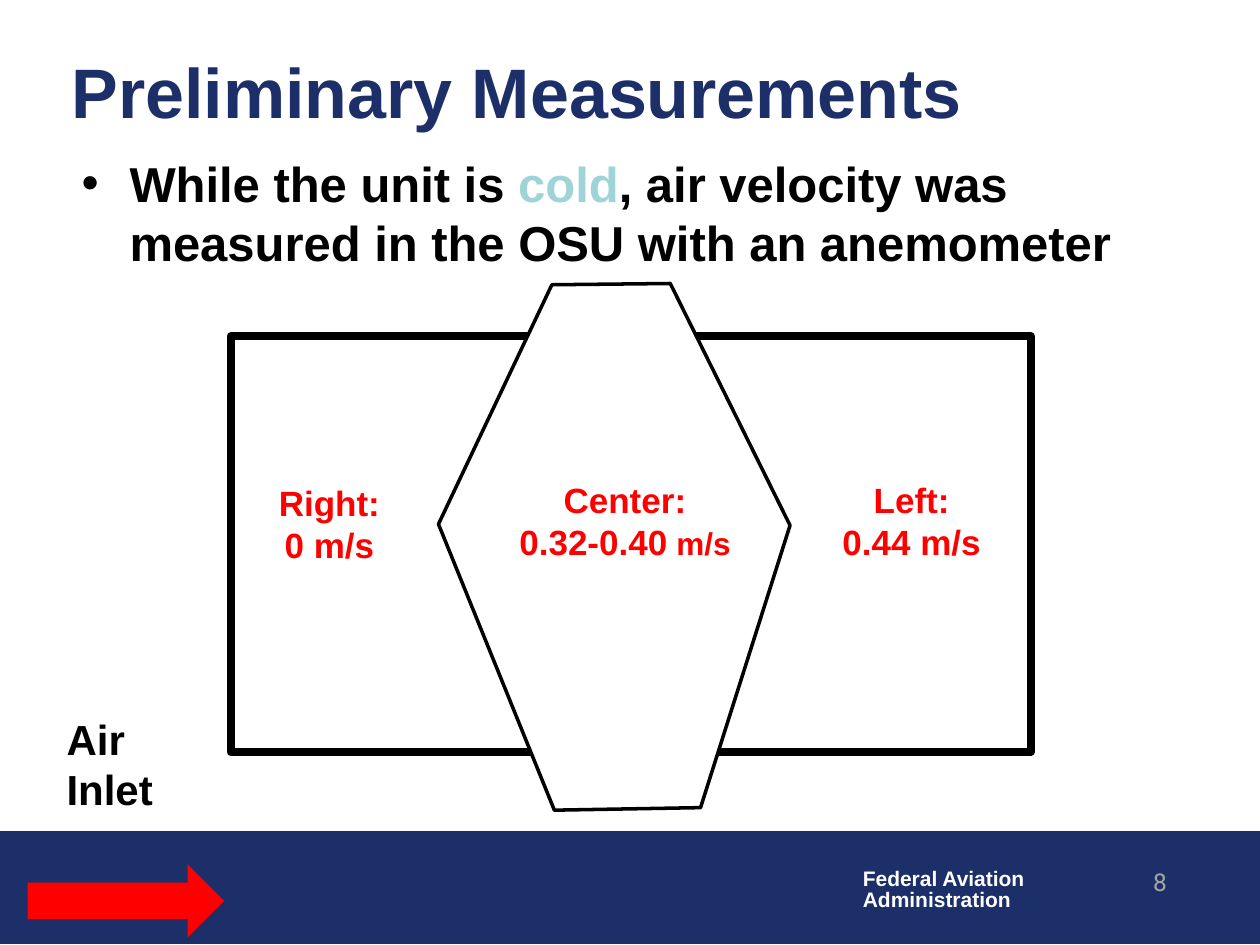
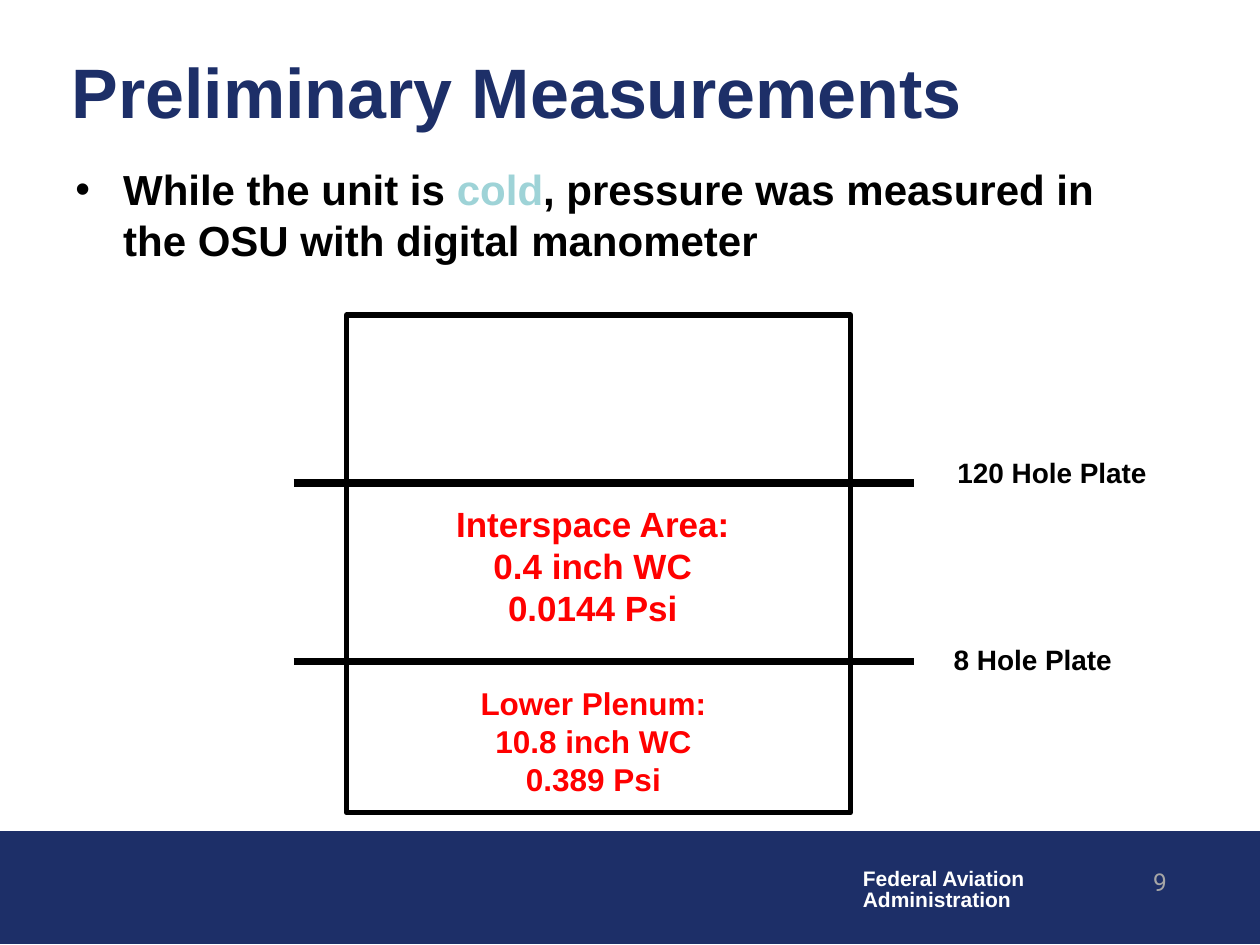
from lxml.etree import SubElement
from pptx import Presentation
from pptx.dml.color import RGBColor
from pptx.enum.shapes import MSO_CONNECTOR, MSO_SHAPE
from pptx.enum.text import MSO_ANCHOR, PP_ALIGN
from pptx.oxml.ns import qn
from pptx.util import Inches, Pt

NAVY, BLACK, WHITE, RED = "1D2F68", "000000", "FFFFFF", "FF0000"
AQUA, GREY = "9ED3D7", "A6A6A6"
COLS, ROWS = 10, 7.5


def paint(target, code):
    """Give a fill, a line fill or a font colour the hex colour."""
    if hasattr(target, "solid"):
        target.solid()
        target.fore_color.rgb = RGBColor.from_string(code)
    else:
        target.color.rgb = RGBColor.from_string(code)


class Deck:
    def __init__(self):
        self.prs = Presentation()
        self.prs.slide_width, self.prs.slide_height = Inches(10), Inches(7.5)
        self.col = self.prs.slide_width / COLS
        self.row = self.prs.slide_height / ROWS
        self.slide = None

    def place(self, x, y):
        return round(x * self.col), round(y * self.row)

    def start(self, title, number):
        """Open a slide with the shared title, band, sign and number."""
        self.slide = self.prs.slides.add_slide(self.prs.slide_layouts[5])
        head = self.slide.shapes.title
        head.left, head.top = self.place(0.47, 0.38)
        head.width, head.height = self.place(9.27, 0.67)
        head.text_frame.text = title
        head.text_frame.vertical_anchor = MSO_ANCHOR.MIDDLE
        self.style(head.text_frame, 40, NAVY, PP_ALIGN.LEFT)
        self.shape((0, 6.6, 10, 0.89), NAVY, NAVY, 0.75)
        sign = self.text("Federal Aviation\nAdministration",
                         (6.75, 6.85, 1.5, 0.44), 12, WHITE)
        for para in sign.paragraphs:
            para.line_spacing = 0.85
        self.text(str(number), (8.18, 6.83, 1.18, 0.5), 14, GREY,
                  PP_ALIGN.RIGHT, "Roboto", False)

    def font(self, run, size, color, face="Arial", bold=True):
        run.font.name, run.font.size, run.font.bold = face, Pt(size), bold
        paint(run.font, color)

    def style(self, frame, size, color, align, face="Arial", bold=True):
        for para in frame.paragraphs:
            para.alignment = align
            for run in para.runs:
                self.font(run, size, color, face, bold)

    def text(self, words, box, size, color=BLACK, align=PP_ALIGN.LEFT,
             face="Arial", bold=True):
        area = self.slide.shapes.add_textbox(*self.place(*box[:2]),
                                             *self.place(*box[2:]))
        frame = area.text_frame
        frame.word_wrap = True
        frame.text = words
        self.style(frame, size, color, align, face, bold)
        return frame

    def label(self, words, box, size=20):
        return self.text(words, box, size, RED, PP_ALIGN.CENTER)

    def bullet(self, parts, box, size):
        """Write one bulleted paragraph from (words, colour) parts."""
        para = self.text("", box, size).paragraphs[0]
        props = para._p.get_or_add_pPr()
        props.set("marL", str(Inches(0.38)))
        props.set("indent", str(-Inches(0.38)))
        SubElement(props, qn("a:buFont")).set("typeface", "Arial")
        SubElement(props, qn("a:buChar")).set("char", "•")
        for words, color in parts:
            run = para.add_run()
            run.text = words
            self.font(run, size, color)

    def finish(self, shape, fill, line, width):
        shape.shadow.inherit = False
        paint(shape.fill, fill)
        if line:
            paint(shape.line.fill, line)
            shape.line.width = Pt(width)
            SubElement(shape.line._ln, qn("a:round"))
        else:
            shape.line.fill.background()

    def shape(self, box, fill=WHITE, line=BLACK, width=3,
              kind=MSO_SHAPE.RECTANGLE):
        item = self.slide.shapes.add_shape(kind, *self.place(*box[:2]),
                                           *self.place(*box[2:]))
        self.finish(item, fill, line, width)

    def outline(self, points, width):
        first, *rest = [self.place(*point) for point in points]
        pen = self.slide.shapes.build_freeform(*first)
        pen.add_line_segments(rest, close=True)
        self.finish(pen.convert_to_shape(), WHITE, BLACK, width)

    def rule(self, left, right, y, width):
        line = self.slide.shapes.add_connector(
            MSO_CONNECTOR.STRAIGHT, *self.place(left, y), *self.place(right, y))
        paint(line.line.fill, BLACK)
        line.line.width = Pt(width)
        SubElement(line._element.spPr, qn("a:effectLst"))


def claim(rest):
    return [("While the unit is ", BLACK), ("cold", AQUA), (rest, BLACK)]


def speed(deck):
    deck.start("Preliminary Measurements", 8)
    deck.bullet(claim(", air velocity was measured in the OSU with an anemometer"),
                (0.55, 1.17, 8.8, 1.1), 28)

    # Unit seen from above
    deck.shape((1.83, 2.67, 6.35, 3.3), width=4.5)
    deck.outline([(4.38, 2.26), (3.48, 4.16), (4.4, 6.43),
                  (5.56, 6.41), (6.27, 4.17), (5.32, 2.25)], 2)

    # Air speeds
    deck.label("Left:\n0.44 m/s", (6.54, 3.75, 1.39, 0.77))
    center = deck.label("Center:\n0.32-0.40", (3.92, 3.75, 2.08, 0.77))
    unit = center.paragraphs[1].add_run()
    unit.text = " m/s"
    deck.font(unit, 18, RED)
    deck.label("Right:\n0 m/s", (1.83, 3.77, 1.57, 0.77))

    # Air inlet
    deck.shape((0.22, 6.86, 1.56, 0.58), RED, None, kind=MSO_SHAPE.RIGHT_ARROW)
    deck.text("Air\nInlet", (0.43, 5.61, 1.08, 0.91), 24)


def pressure(deck):
    deck.start("Preliminary Measurements", 9)
    deck.bullet(claim(", pressure was measured in the OSU with digital manometer"),
                (0.5, 1.25, 8.8, 1), 24)

    # Unit and its plates
    deck.shape((2.75, 2.5, 4, 3.95))
    for y in (3.83, 5.25):
        deck.rule(2.33, 7.25, y, 4.5)
    deck.text("120 Hole Plate", (7.5, 3.57, 1.73, 0.37), 16)
    deck.text("8 Hole Plate", (7.47, 5.05, 1.56, 0.37), 16)

    # Pressures
    deck.label("Lower Plenum:\n10.8 inch WC\n0.389 Psi",
               (2.86, 5.38, 3.7, 1.01), 18)
    deck.label("Interspace Area:\n0.4 inch WC\n0.0144 Psi",
               (2.83, 3.94, 3.75, 1.11))


def main():
    deck = Deck()
    speed(deck)
    pressure(deck)
    deck.prs.save("out.pptx")


if __name__ == "__main__":
    main()
